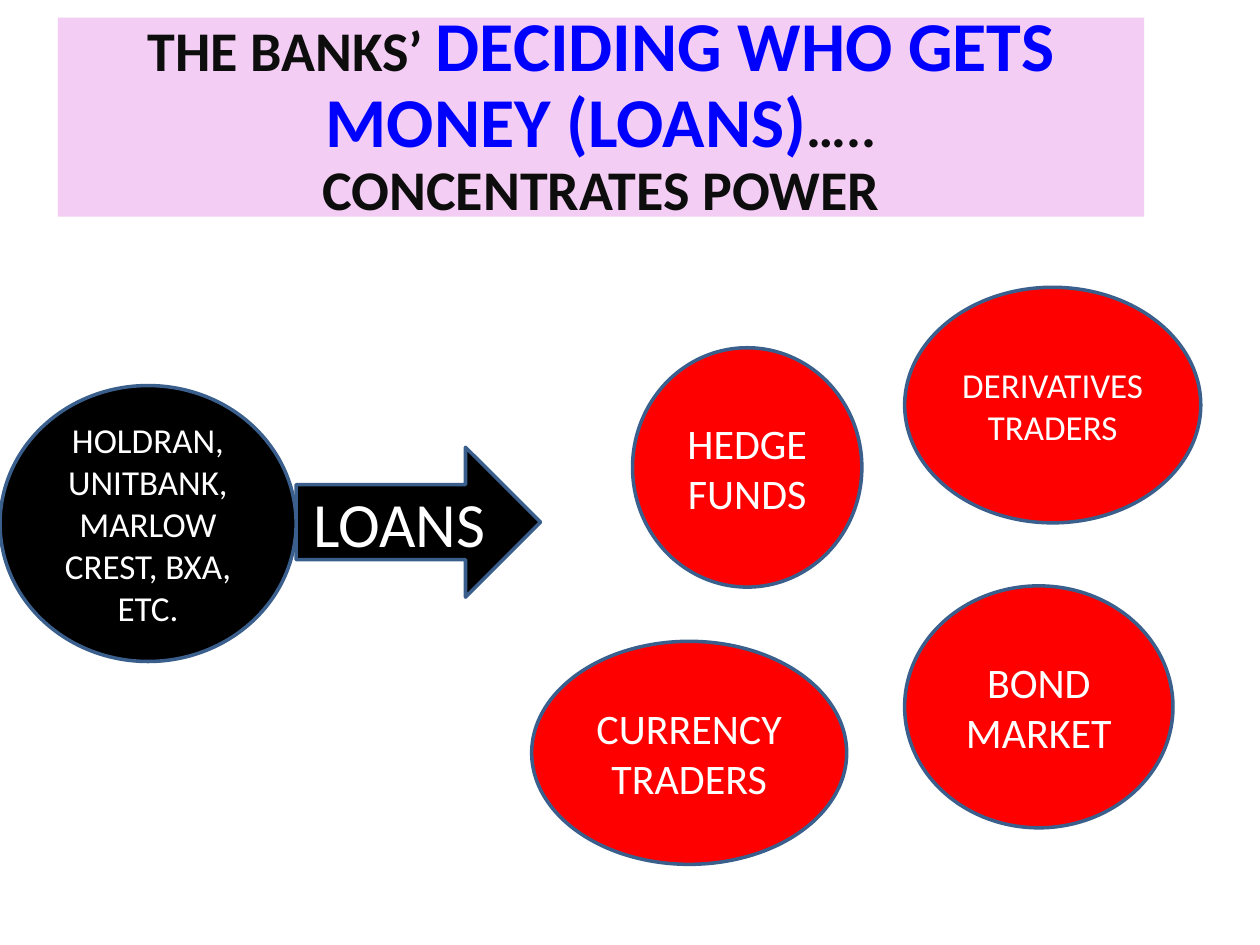
from pptx import Presentation
from pptx.dml.color import RGBColor
from pptx.enum.shapes import MSO_SHAPE
from pptx.enum.text import MSO_ANCHOR, MSO_AUTO_SIZE, PP_ALIGN
from pptx.util import Inches, Pt

FONT = "Calibri"
BLACK = RGBColor(0x00, 0x00, 0x00)
WHITE = RGBColor(0xFF, 0xFF, 0xFF)
RED = RGBColor(0xFF, 0x00, 0x00)
BLUE = RGBColor(0x00, 0x00, 0xFF)
INK = RGBColor(0x0D, 0x0D, 0x0D)
OUTLINE = RGBColor(0x3A, 0x5F, 0x8C)
PINK = RGBColor(0xF3, 0xCD, 0xF3)

SLIDE_WIDTH, SLIDE_HEIGHT = Inches(10), Inches(7.5)

# Boxes are left, top, width, height in percent of the slide
TITLE_BOX = (4.6, 1.87, 86.2, 21.07)
BANKS_BOX = (0, 40.8, 23.5, 29.2)
LOANS_BOX = (23.5, 47.33, 19.4, 15.87)
BORROWERS = [
    ("HEDGE FUNDS", 24, (50.2, 36.8, 18.2, 25.33)),
    ("DERIVATIVES\nTRADERS", 20, (71.8, 30.4, 23.5, 24.93)),
    ("CURRENCY\nTRADERS", 24, (42.2, 67.87, 25, 23.6)),
    ("BOND MARKET", 24, (71.8, 62, 21.3, 25.6)),
]


def to_lengths(box):
    sides = (SLIDE_WIDTH, SLIDE_HEIGHT) * 2
    return [round(side * share / 100) for side, share in zip(sides, box)]


def format_run(run, size, color, bold=False):
    run.font.name = FONT
    run.font.size = Pt(size)
    run.font.bold = bold
    run.font.color.rgb = color


def add_title(slide, box):
    title = slide.shapes.title
    title.left, title.top, title.width, title.height = to_lengths(box)
    title.fill.solid()
    title.fill.fore_color.rgb = PINK
    text_frame = title.text_frame
    text_frame.auto_size = MSO_AUTO_SIZE.NONE
    text_frame.vertical_anchor = MSO_ANCHOR.MIDDLE
    lines = [
        [("THE BANKS’ ", 32, INK), ("DECIDING WHO GETS MONEY (LOANS)", 40, BLUE),
         ("…..", 32, INK)],
        [("CONCENTRATES POWER", 32, INK)],
    ]
    for index, line in enumerate(lines):
        paragraph = text_frame.add_paragraph() if index else text_frame.paragraphs[0]
        paragraph.alignment = PP_ALIGN.CENTER
        paragraph.line_spacing = 0.9
        for text, size, color in line:
            run = paragraph.add_run()
            run.text = text
            format_run(run, size, color, bold=True)


def add_labelled_shape(slide, kind, box, text, size, fill):
    shape = slide.shapes.add_shape(kind, *to_lengths(box))
    shape.shadow.inherit = False
    shape.fill.solid()
    shape.fill.fore_color.rgb = fill
    shape.line.color.rgb = OUTLINE
    shape.line.width = Pt(2)
    text_frame = shape.text_frame
    text_frame.word_wrap = True
    text_frame.vertical_anchor = MSO_ANCHOR.MIDDLE
    text_frame.text = text
    for paragraph in text_frame.paragraphs:
        paragraph.alignment = PP_ALIGN.CENTER
        for run in paragraph.runs:
            format_run(run, size, WHITE)


def add_lenders(slide, banks_box, loans_box):
    add_labelled_shape(slide, MSO_SHAPE.RIGHT_ARROW, loans_box, "LOANS", 36, BLACK)
    add_labelled_shape(slide, MSO_SHAPE.OVAL, banks_box,
                       "HOLDRAN, UNITBANK, MARLOW CREST, BXA, ETC.", 20, BLACK)


def add_borrowers(slide, borrowers):
    for text, size, box in borrowers:
        add_labelled_shape(slide, MSO_SHAPE.OVAL, box, text, size, RED)


def main():
    presentation = Presentation()
    presentation.slide_width = SLIDE_WIDTH
    presentation.slide_height = SLIDE_HEIGHT
    title_only = presentation.slide_layouts[5]
    slide = presentation.slides.add_slide(title_only)

    # Heading, then the flow from lenders to borrowers
    add_title(slide, TITLE_BOX)
    add_lenders(slide, BANKS_BOX, LOANS_BOX)
    add_borrowers(slide, BORROWERS)
    presentation.save("out.pptx")


if __name__ == "__main__":
    main()
